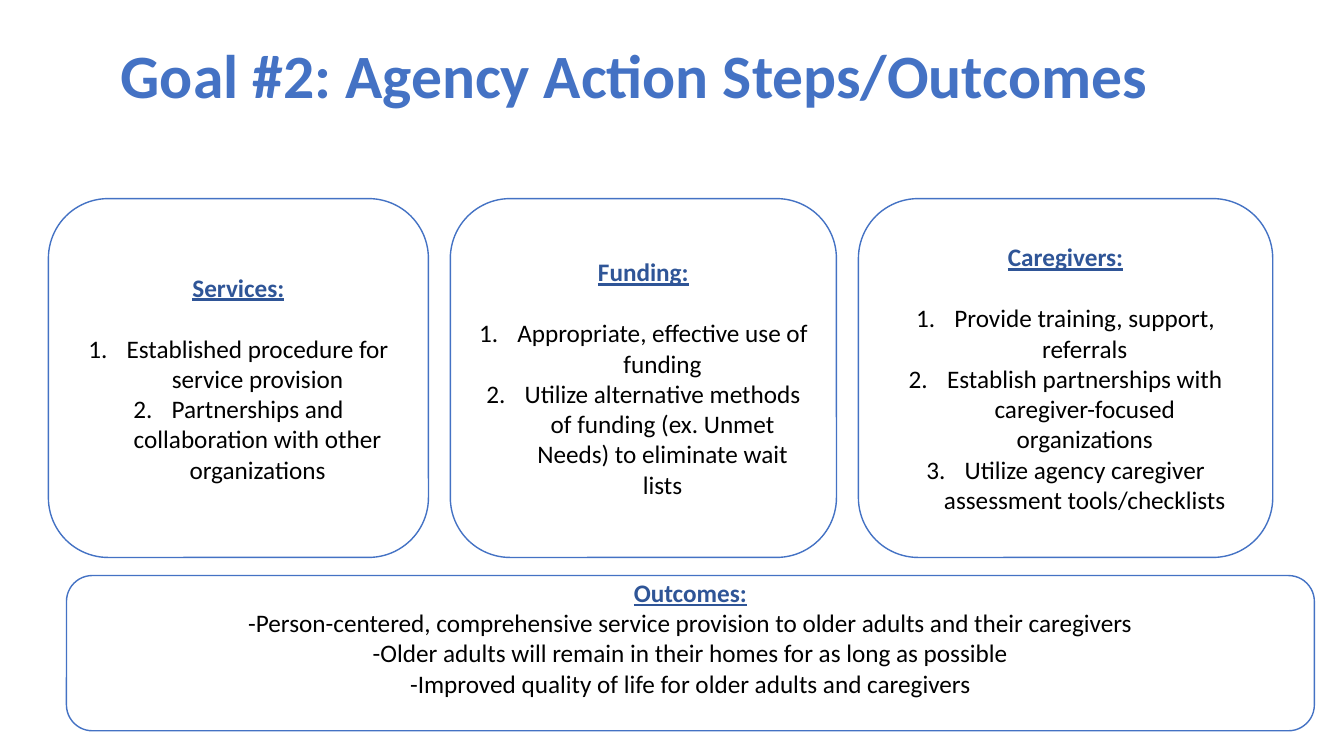
from pptx import Presentation, util as u
from pptx.dml.color import RGBColor
from pptx.enum import shapes, text
from lxml import etree

WIDE, HIGH = u.Inches(13.333), u.Inches(7.5)
BLUE, NAVY, BLACK, WHITE = "4472C4", "2F5597", "000000", "FFFFFF"
HEAD = dict(name="Calibri", size=u.Pt(18), bold=True, underline=True)
BODY = dict(name="Calibri", size=u.Pt(18), bold=False, underline=False)
TITLE = dict(name="Calibri", size=u.Pt(44), bold=True)
LINE = u.Pt(22)
INDENT = u.Inches(0.38)
TOP, TALL, GAP = 26.27, 47.47, 1.63
CARDS = [
    (28.28, "Services:", [
        "Established procedure for service provision",
        "Partnerships and collaboration with other organizations"]),
    (28.73, "Funding:", [
        "Appropriate, effective use of funding",
        "Utilize alternative methods of funding (ex. Unmet Needs) "
        "to eliminate wait lists"]),
    (30.83, "Caregivers:", [
        "Provide training, support, referrals",
        "Establish partnerships with caregiver-focused organizations",
        "Utilize agency caregiver assessment tools/checklists"]),
]
RESULTS = [
    "-Person-centered, comprehensive service provision to older adults "
    "and their caregivers",
    "-Older adults will remain in their homes for as long as possible",
    "-Improved quality of life for older adults and caregivers",
]


def paint(target, code):
    """Set a colour from a hex string."""
    target.rgb = RGBColor.from_string(code)


def place(box):
    """Turn percent shares of the slide into lengths."""
    return [int(share * side / 100)
            for share, side in zip(box, (WIDE, HIGH, WIDE, HIGH))]


def style(para, words, form, code):
    """Write one centred paragraph in the given format."""
    para.alignment = text.PP_ALIGN.CENTER
    run = para.add_run()
    run.text = words
    for key, value in form.items():
        setattr(run.font, key, value)
    paint(run.font.color, code)


def number(para):
    """Give a paragraph a hanging automatic number."""
    props = para._p.get_or_add_pPr()
    props.set("marL", str(INDENT))
    props.set("indent", str(-INDENT))
    space = props.nsmap["a"]
    etree.SubElement(props, f"{{{space}}}buFont", typeface="+mj-lt")
    etree.SubElement(props, f"{{{space}}}buAutoNum", type="arabicPeriod")


def panel(slide, box, head, items, steps):
    """Draw a rounded panel with a heading and its lines."""
    shape = slide.shapes.add_shape(
        shapes.MSO_SHAPE.ROUNDED_RECTANGLE, *place(box))
    shape.shadow.inherit = False
    shape.fill.solid()
    paint(shape.fill.fore_color, WHITE)
    paint(shape.line.color, BLUE)
    shape.line.width = u.Pt(1)
    frame = shape.text_frame
    frame.word_wrap = True
    frame.vertical_anchor = text.MSO_ANCHOR.MIDDLE
    first = frame.paragraphs[0]
    style(first, head, HEAD, NAVY)
    if steps:
        first.space_after = LINE
    else:
        frame.margin_bottom += LINE
    for item in items:
        para = frame.add_paragraph()
        if steps:
            number(para)
        style(para, item, BODY, BLACK)


def banner(slide, box, words):
    """Place and format the slide title."""
    title = slide.shapes.title
    title.left, title.top, title.width, title.height = place(box)
    title.text_frame.vertical_anchor = text.MSO_ANCHOR.MIDDLE
    para = title.text_frame.paragraphs[0]
    para.line_spacing = 0.9
    style(para, words, TITLE, BLUE)


def row(slide, left):
    """Set the step cards side by side with equal gaps."""
    for wide, head, items in CARDS:
        panel(slide, (left, TOP, wide, TALL), head, items, True)
        left += wide + GAP


def main():
    """Build and save the slide."""
    deck = Presentation()
    deck.slide_width, deck.slide_height = WIDE, HIGH
    slide = deck.slides.add_slide(deck.slide_layouts.get_by_name("Title Only"))
    banner(slide, (4.95, 5.2, 84.53, 10.27),
           "Goal #2: Agency Action Steps/Outcomes")
    row(slide, 3.6)
    panel(slide, (4.95, 76.13, 92.85, 20.53), "Outcomes:", RESULTS, False)
    deck.save("out.pptx")


if __name__ == "__main__":
    main()
